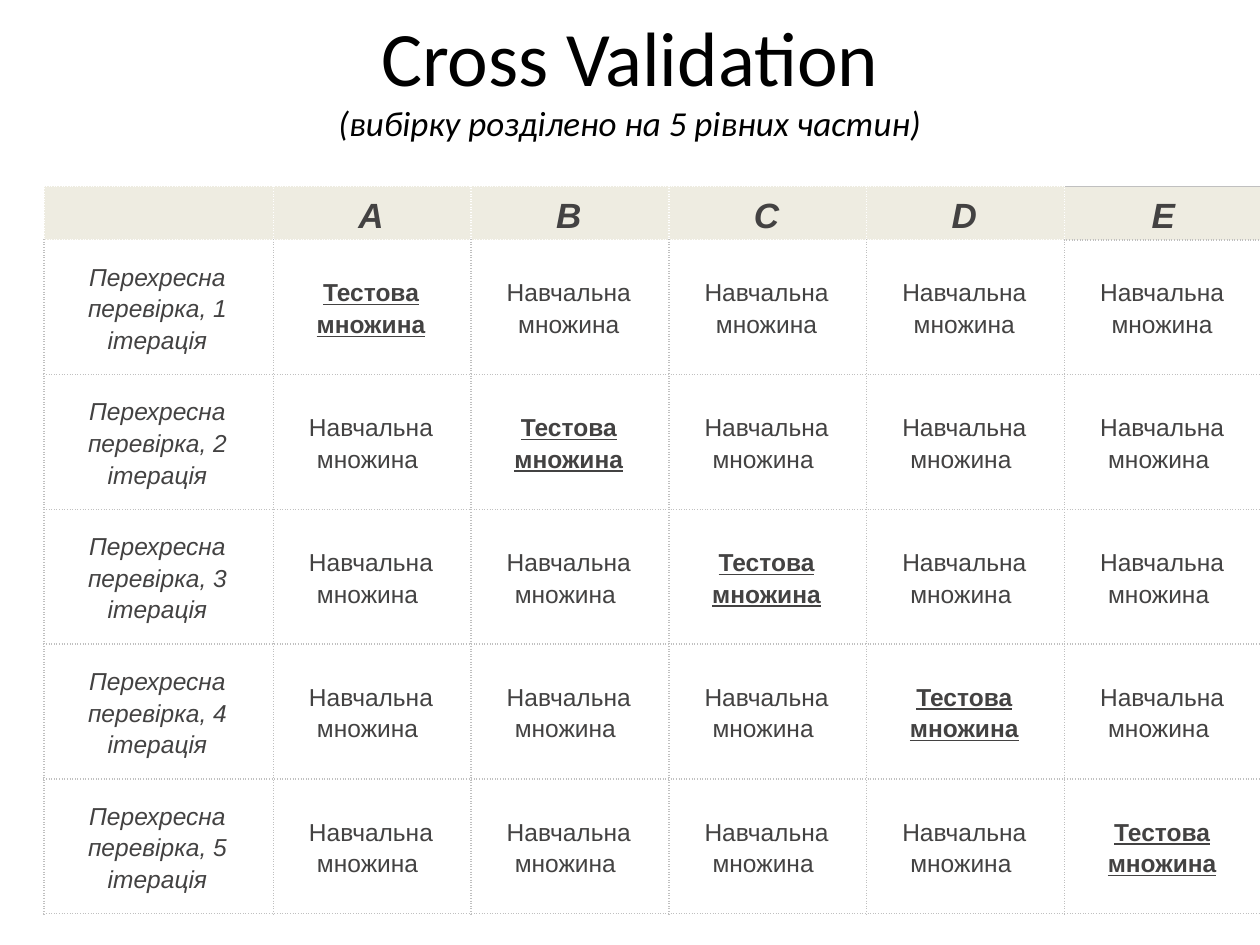
from lxml import etree
from pptx import Presentation
from pptx.dml.color import RGBColor
from pptx.enum.text import MSO_ANCHOR as ANCHOR, PP_ALIGN as ALIGN
from pptx.oxml.ns import qn
from pptx.util import Inches, Pt

GREY, WHITE, CREAM, INK = "C0C0C0", "FFFFFF", "EEECE1", "434242"
SIDES = ("L", "R", "T", "B")
INSETS = (0.03, 0.02, 0.05, 0.02)


def rgb(value):
    return RGBColor.from_string(value)


def add_text(p, text, font="Arial", size=14, color=INK, bold=False,
             italic=False, underline=False):
    r = p.add_run()
    r.text = text
    f = r.font
    f.name, f.size, f.color.rgb = font, Pt(size), rgb(color)
    f.bold, f.italic, f.underline = bold, italic, underline


def set_insets(target, insets):
    (target.margin_left, target.margin_top,
     target.margin_right, target.margin_bottom) = map(Inches, insets)


def set_borders(cell, borders):
    """Borders maps a side to (colour, dash); they precede the fill in the XML."""
    tc_pr = cell._tc.get_or_add_tcPr()
    for i, side in enumerate(SIDES):
        color, dash = borders[side]
        ln = etree.Element(qn(f"a:ln{side}"), w=str(Pt(1)))
        fill = etree.SubElement(ln, qn("a:solidFill"))
        etree.SubElement(fill, qn("a:srgbClr"), val=color)
        etree.SubElement(ln, qn("a:prstDash"), val=dash)
        tc_pr.insert(i, ln)


class SlideBuilder:
    def __init__(self, prs):
        self.s = prs.slides.add_slide(prs.slide_layouts[6])

    def title(self, heading, subtitle, left, top, width, height):
        box = self.s.shapes.add_textbox(*map(Inches, (left, top, width, height)))
        tf = box.text_frame
        tf.word_wrap, tf.vertical_anchor = True, ANCHOR.MIDDLE
        p = tf.paragraphs[0]
        p.alignment = ALIGN.CENTER
        add_text(p, heading, font="Calibri", size=44, color="000000")
        p.add_line_break()
        add_text(p, subtitle, font="Calibri", size=20, color="000000", italic=True)

    def table(self, left, top, widths, heights):
        frame = self.s.shapes.add_table(
            len(heights), len(widths), Inches(left), Inches(top),
            Inches(sum(widths)), Inches(sum(heights)))
        table = frame.table
        table.first_row = table.horz_banding = False
        for col, width in zip(table.columns, widths):
            col.width = Inches(width)
        for row, height in zip(table.rows, heights):
            row.height = Inches(height)
        return table

    def cell(self, cell, text, fill, borders, insets=INSETS, **fmt):
        cell.fill.solid()
        cell.fill.fore_color.rgb = rgb(fill)
        set_borders(cell, borders)
        set_insets(cell, insets)
        cell.vertical_anchor = ANCHOR.MIDDLE
        p = cell.text_frame.paragraphs[0]
        p.alignment, p.line_spacing = ALIGN.CENTER, 1.15
        if text:
            add_text(p, text, **fmt)


def main():
    prs = Presentation()
    prs.slide_width, prs.slide_height = Inches(10), Inches(7.5)
    slide = SlideBuilder(prs)

    # Title
    slide.title("Cross Validation", "(вибірку розділено на 5 рівних частин)",
                0.5, -0.02, 9, 1.25)

    # Table grid
    folds = "ABCDE"
    n = len(folds)
    table = slide.table(0.35, 1.48, [1.82] + [1.57] * n, [0.39] + [1.07] * n)
    grey_dots = dict.fromkeys(SIDES, (GREY, "dot"))
    white_dots = dict.fromkeys(SIDES, (WHITE, "dot"))

    # Header row: the last cell has a solid outer edge
    last_header = grey_dots | {"L": (WHITE, "dot"), "T": (GREY, "solid"),
                               "R": (GREY, "solid")}
    for c, name in enumerate(["", *folds]):
        is_last = c == n
        slide.cell(table.cell(0, c), name, CREAM,
                   last_header if is_last else white_dots,
                   insets=(0, 0, 0, 0) if is_last else INSETS,
                   size=20, bold=True, italic=True)

    # Iterations: the test set moves along the diagonal
    for i in range(1, n + 1):
        borders = grey_dots | {"T": (WHITE, "dot")} if i == 1 else grey_dots
        slide.cell(table.cell(i, 0), f"Перехресна перевірка, {i} ітерація",
                   WHITE, borders, italic=True)
        training = "Навчальна множина" if i == 1 else "Навчальна множина "
        for c in range(1, n + 1):
            is_test = c == i
            edges = grey_dots if c == n else borders
            slide.cell(table.cell(i, c), "Тестова множина" if is_test else training,
                       WHITE, edges, bold=is_test, underline=is_test)

    prs.save("out.pptx")


if __name__ == "__main__":
    main()
